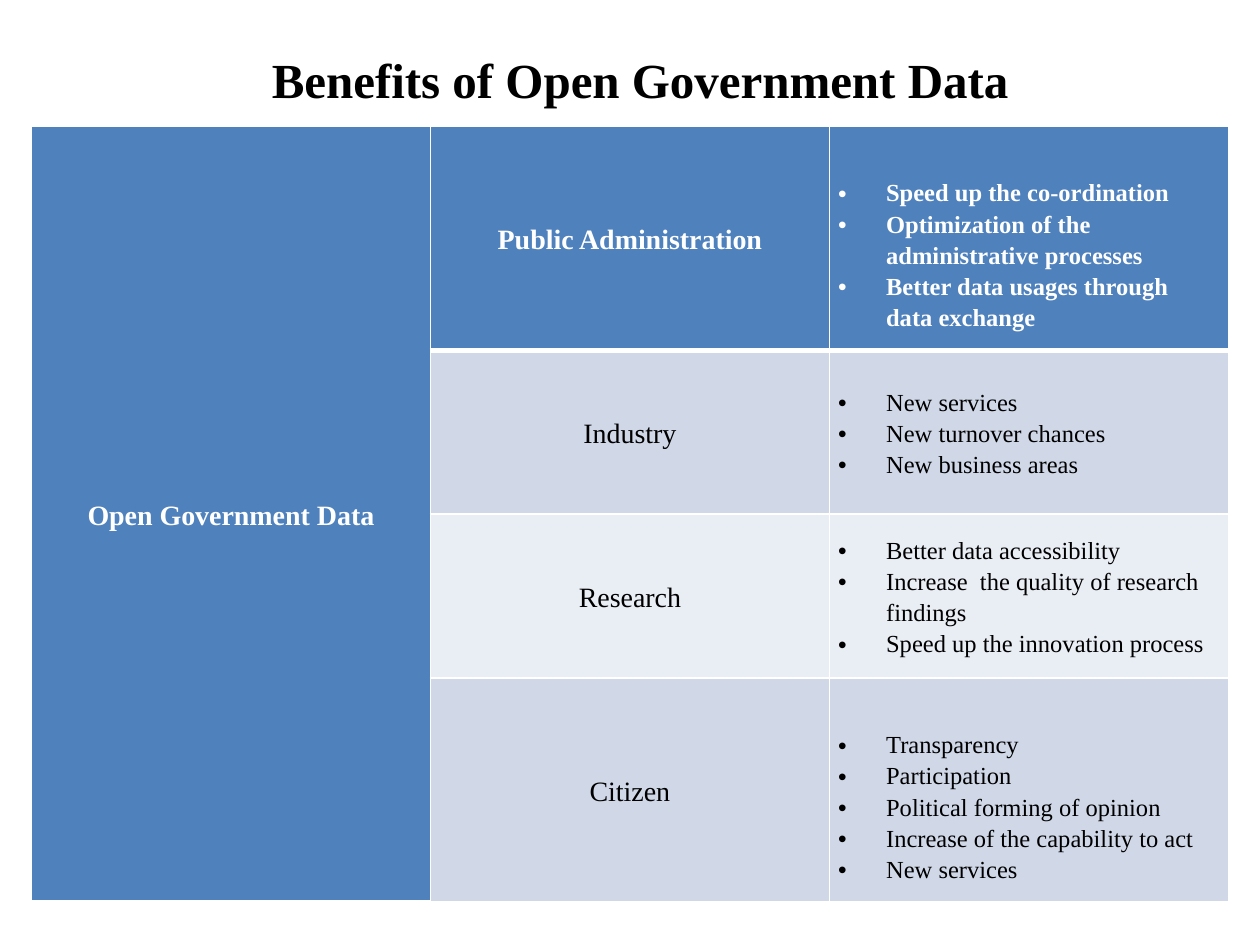
from dataclasses import dataclass

from lxml.etree import SubElement
from pptx import Presentation
from pptx.dml.color import RGBColor
from pptx.enum.text import MSO_ANCHOR, PP_ALIGN
from pptx.oxml.ns import qn
from pptx.util import Inches, Pt


@dataclass(frozen=True)
class Theme:
    font: str = "Times New Roman"
    ink: str = "000000"
    white: str = "FFFFFF"
    header: str = "4F81BD"
    band_dark: str = "D0D8E8"
    band_light: str = "E9EDF4"
    title_size: int = 28
    label_size: int = 16
    list_size: int = 14
    line_spacing: float = 1.15
    thin_rule: int = 1
    header_rule: int = 3


TITLE = "Benefits of Open Government Data"
SUBJECT = "Open Government Data"
# Beneficiary, row height, top margin of the list, benefits
BENEFITS = [
    ("Public Administration", 1.78, 0.25, [
        "Speed up the co-ordination",
        "Optimization of the administrative processes",
        "Better data usages through data exchange",
    ]),
    ("Industry", 1.3, 0, [
        "New services",
        "New turnover chances",
        "New business areas",
    ]),
    ("Research", 1.3, 0, [
        "Better data accessibility",
        "Increase  the quality of research findings",
        "Speed up the innovation process",
    ]),
    ("Citizen", 1.78, 0.25, [
        "Transparency",
        "Participation",
        "Political forming of opinion",
        "Increase of the capability to act",
        "New services",
    ]),
]


class SlideBuilder:
    def __init__(self, deck, theme):
        self.theme = theme
        self.page = deck.slides.add_slide(deck.slide_layouts[5])

    def add_span(self, paragraph, text, size, color, bold):
        span = paragraph.add_run()
        span.text = text
        span.font.name = self.theme.font
        span.font.size = Pt(size)
        span.font.bold = bold
        span.font.color.rgb = RGBColor.from_string(color)

    def title(self, text):
        box = self.page.shapes.title
        box.left, box.top = Inches(0.58), Inches(0)
        box.width, box.height = Inches(9), Inches(1.25)
        box.text_frame.vertical_anchor = MSO_ANCHOR.MIDDLE
        paragraph = box.text_frame.paragraphs[0]
        paragraph.alignment = PP_ALIGN.CENTER
        self.add_span(paragraph, text, self.theme.title_size, self.theme.ink, True)

    def table(self, row_heights, columns):
        frame = self.page.shapes.add_table(
            len(row_heights), columns, Inches(0.25), Inches(1),
            Inches(9.5), Inches(sum(row_heights)))
        grid = frame.table
        grid.first_row = grid.horz_banding = False
        for row, height in zip(grid.rows, row_heights):
            row.height = Inches(height)
        return grid

    def borders(self, cell, top, bottom):
        properties = cell._tc.get_or_add_tcPr()
        thin = self.theme.thin_rule
        for side, width in (("L", thin), ("R", thin), ("T", top), ("B", bottom)):
            line = SubElement(properties, qn(f"a:ln{side}"), w=str(Pt(width)))
            fill = SubElement(line, qn("a:solidFill"))
            SubElement(fill, qn("a:srgbClr"), val=self.theme.white)

    def prepare_cell(self, cell, fill, top, bottom, margin_top=0):
        self.borders(cell, top, bottom)
        cell.fill.solid()
        cell.fill.fore_color.rgb = RGBColor.from_string(fill)
        cell.vertical_anchor = MSO_ANCHOR.MIDDLE
        cell.margin_left = cell.margin_right = Inches(0.07)
        cell.margin_top, cell.margin_bottom = Inches(margin_top), Inches(0)

    def label(self, cell, text, color, bold):
        paragraph = cell.text_frame.paragraphs[0]
        paragraph.alignment = PP_ALIGN.CENTER
        paragraph.line_spacing = self.theme.line_spacing
        self.add_span(paragraph, text, self.theme.label_size, color, bold)

    def bullets(self, cell, items, color, bold):
        frame = cell.text_frame
        for index, item in enumerate(items):
            paragraph = frame.add_paragraph() if index else frame.paragraphs[0]
            properties = paragraph._p.get_or_add_pPr()
            properties.set("marL", str(Inches(0.38)))
            properties.set("indent", str(-Inches(0.38)))
            SubElement(properties, qn("a:buFont"), typeface="Arial")
            SubElement(properties, qn("a:buChar"), char="•")
            paragraph.line_spacing = self.theme.line_spacing
            self.add_span(paragraph, item, self.theme.list_size, color, bold)


def main():
    deck = Presentation()
    deck.slide_width, deck.slide_height = Inches(10), Inches(7.5)
    theme = Theme()
    builder = SlideBuilder(deck, theme)
    builder.title(TITLE)

    grid = builder.table([height for _, height, _, _ in BENEFITS], 3)
    subject = grid.cell(0, 0)
    subject.merge(grid.cell(len(BENEFITS) - 1, 0))
    builder.prepare_cell(subject, theme.header, theme.thin_rule, theme.header_rule)
    builder.label(subject, SUBJECT, theme.white, True)

    for row, (name, _, list_top, items) in enumerate(BENEFITS):
        heading = row == 0
        band = theme.band_dark if row % 2 else theme.band_light
        fill = theme.header if heading else band
        color = theme.white if heading else theme.ink
        top = theme.header_rule if row == 1 else theme.thin_rule
        bottom = theme.header_rule if heading else theme.thin_rule
        beneficiary, benefits = grid.cell(row, 1), grid.cell(row, 2)
        builder.prepare_cell(beneficiary, fill, top, bottom)
        builder.prepare_cell(benefits, fill, top, bottom, list_top)
        builder.label(beneficiary, name, color, heading)
        builder.bullets(benefits, items, color, heading)

    deck.save("out.pptx")


if __name__ == "__main__":
    main()
